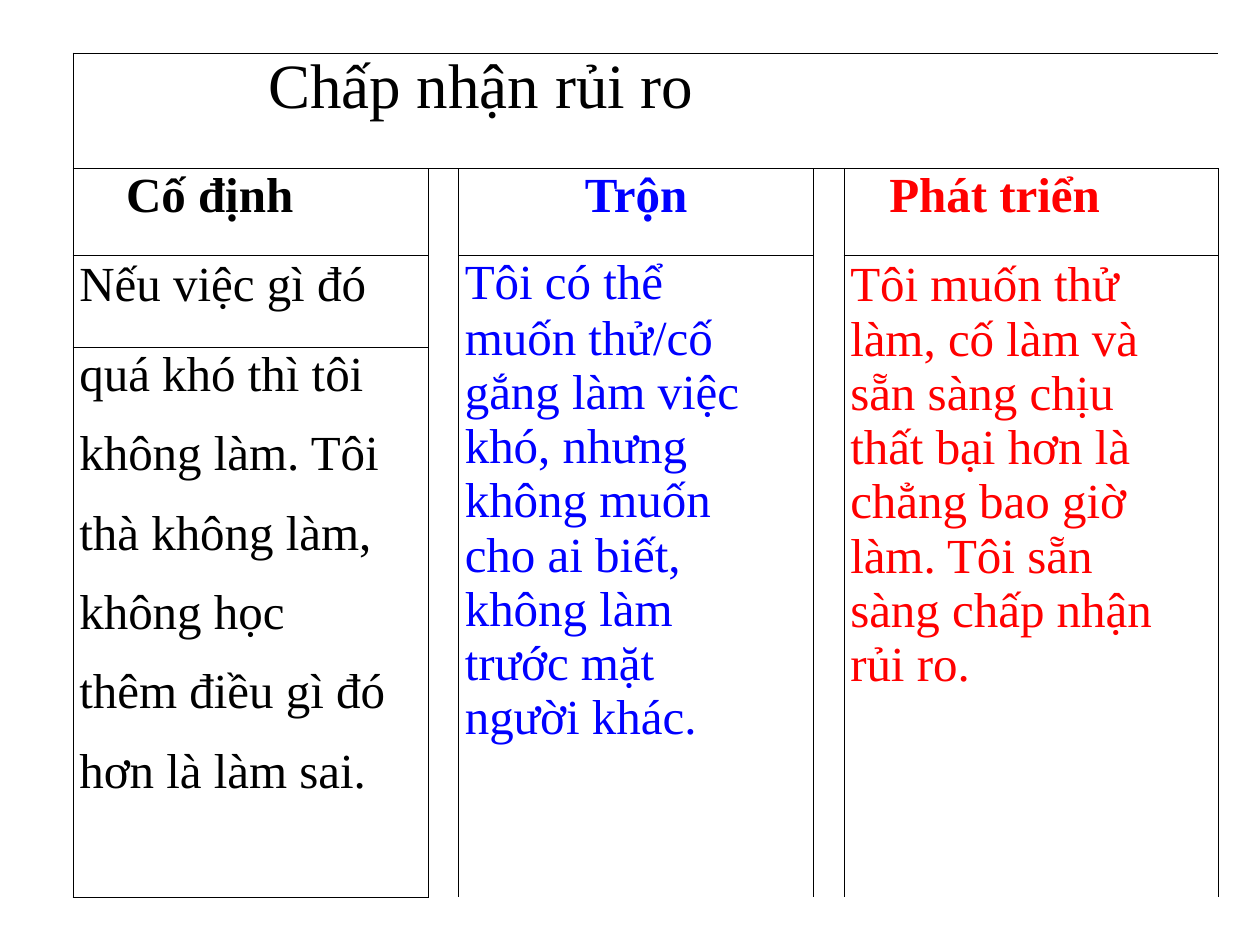
from pptx import Presentation
from pptx.dml.color import RGBColor
from pptx.enum import text as t
from pptx.oxml import parse_xml
from pptx.oxml.ns import nsdecls
from pptx.util import Inches, Pt

FONT = "Times New Roman"
BLACK, BLUE, RED = "000000", "0000FF", "FF0000"
COLS = [2.82, 0.2, 2.82, 0.19, 2.97]
ROWS = [0.92, 0.69, 0.73] + [0.63] * 5 + [1.21]
LAST = len(ROWS) - 1

FIXED = ["quá khó thì tôi", "không làm. Tôi", "thà không làm,",
         "không học", "thêm điều gì đó", "hơn là làm sai."]
MIXED = ["muốn thử/cố", "gắng làm việc", "khó, nhưng", "không muốn",
         "cho ai biết,", "không làm", "trước mặt", "người khác."]
GROWTH = ["Tôi muốn thử", "làm, cố làm và", "sẵn sàng chịu",
          "thất bại hơn là", "chẳng bao giờ", "làm. Tôi sẵn",
          "sàng chấp nhận", "rủi ro."]


def color(code):
    return RGBColor.from_string(code)


def lines(parts):
    """Join the lines of one paragraph with soft breaks."""
    return " \v".join(parts)


def border(cell, sides):
    """Rule the named sides of a cell and clear the others."""
    props = cell._tc.get_or_add_tcPr()
    for i, side in enumerate("LRTB"):
        paint = (f'<a:solidFill><a:srgbClr val="{BLACK}"/></a:solidFill>'
                 if side in sides else "<a:noFill/>")
        props.insert(i, parse_xml(
            f'<a:ln{side} {nsdecls("a")} w="{Pt(0.5)}">{paint}</a:ln{side}>'))


def frame(table, top, left, end, right, open_end=False):
    """Rule the outside of a block of cells."""
    for r in range(top, end + 1):
        for c in range(left, right + 1):
            edges = {"L": c == left, "R": c == right, "T": r == top,
                     "B": r == end and not open_end}
            cell = table.cell(r, c)
            cell.fill.background()
            border(cell, [side for side, on in edges.items() if on])


def write(cell, paras, tone=BLACK, size=28, bold=False, indent=0.05,
          before=(0, 0), top=0, center=False):
    cell.margin_left = cell.margin_right = cell.margin_bottom = 0
    cell.margin_top = Inches(top)
    cell.vertical_anchor = t.MSO_ANCHOR.TOP
    body = cell.text_frame
    body.text = "\n".join(paras)
    for para, gap in zip(body.paragraphs, before):
        para.alignment = t.PP_ALIGN.CENTER if center else t.PP_ALIGN.LEFT
        para.space_before = Pt(gap)
        para._p.get_or_add_pPr().set("marL", str(Inches(indent)))
        for run in para.runs:
            font = run.font
            font.name, font.size, font.bold = FONT, Pt(size), bold
            font.color.rgb = color(tone)


def risk_table(slide, left, top):
    shape = slide.shapes.add_table(
        len(ROWS), len(COLS), Inches(left), Inches(top),
        Inches(sum(COLS)), Inches(sum(ROWS)))
    table = shape.table
    table.first_row = table.horz_banding = False
    for col, width in zip(table.columns, COLS):
        col.width = Inches(width)
    for row, height in zip(table.rows, ROWS):
        row.height = Inches(height)

    # Title band
    frame(table, 0, 0, 0, 4)
    table.cell(0, 0).merge(table.cell(0, 4))
    write(table.cell(0, 0), ["Chấp nhận rủi ro"], size=36, indent=1.55)

    # Column heads
    for c in (0, 2, 4):
        frame(table, 1, c, 1, c)
    write(table.cell(1, 0), ["Cố định"], bold=True, indent=0.42,
          before=(0.2,))
    write(table.cell(1, 2), ["Trộn"], BLUE, bold=True, indent=0,
          before=(0.2,), center=True)
    write(table.cell(1, 4), ["Phát triển"], RED, bold=True, indent=0.36)

    # Open gaps between the columns
    for c in (1, 3):
        frame(table, 1, c, LAST, c, open_end=True)
        table.cell(1, c).merge(table.cell(LAST, c))

    # Fixed mindset: one line per row
    frame(table, 2, 0, 2, 0)
    frame(table, 3, 0, LAST, 0)
    write(table.cell(2, 0), ["Nếu việc gì đó"], before=(1.5,), top=0.02)
    for r, line in enumerate(FIXED, 3):
        write(table.cell(r, 0), [line])

    # Mixed and growth mindsets: one tall cell each
    for c in (2, 4):
        frame(table, 2, c, LAST, c)
        table.cell(2, c).merge(table.cell(LAST, c))
    write(table.cell(2, 2), ["Tôi có thể", lines(MIXED)], BLUE,
          before=(0, 0.9))
    write(table.cell(2, 4), [lines(GROWTH)], RED, before=(1.3,), top=0.02)


def main():
    deck = Presentation()
    deck.slide_width, deck.slide_height = Inches(10), Inches(7.5)
    slide = deck.slides.add_slide(deck.slide_layouts[6])
    risk_table(slide, 0.58, 0.42)
    deck.save("out.pptx")


if __name__ == "__main__":
    main()
